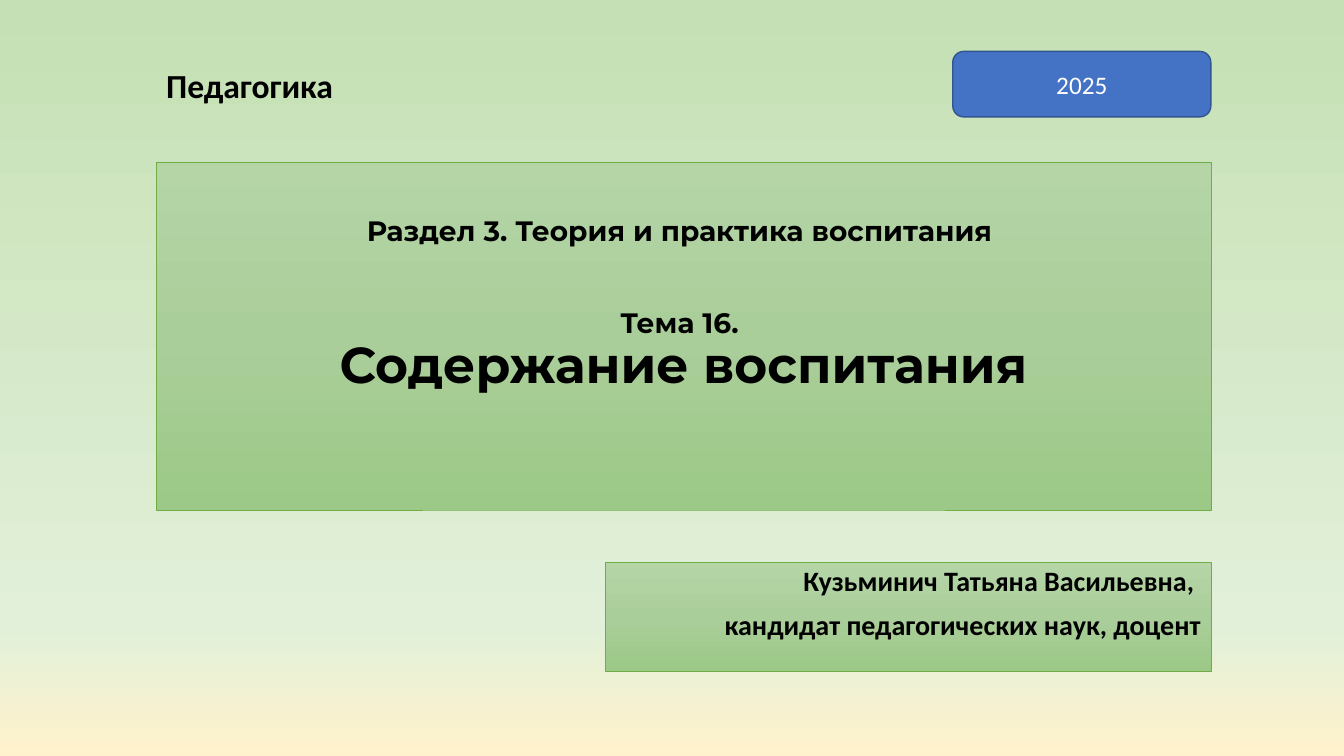
import dataclasses

import lxml.etree
import pptx
import pptx.dml.color
import pptx.enum.shapes
import pptx.enum.text
import pptx.oxml.ns
import pptx.util

Inches = pptx.util.Inches
Align = pptx.enum.text.PP_ALIGN
Anchor = pptx.enum.text.MSO_ANCHOR


@dataclasses.dataclass(frozen=True)
class Theme:
    heading_font: str = "Montserrat"
    body_font: str = "Calibri"
    text: str = "000000"
    badge_text: str = "FFFFFF"
    badge_fill: str = "4472C4"
    badge_line: str = "325491"
    panel_line: str = "70AD47"
    panel_stops: tuple = ((0, "B5D5A7"), (50, "AACE9A"), (100, "9CC987"))
    background_stops: tuple = ((0, "C5E0B4"), (83, "E2F0D9"), (100, "FFF2CC"))
    topic_size: int = 36
    course_size: int = 24
    body_size: int = 20
    badge_size: int = 18


class CoverSlide:
    def __init__(self, presentation, theme):
        self.theme = theme
        self.slide = presentation.slides.add_slide(presentation.slide_layouts[0])

    def color(self, value):
        return pptx.dml.color.RGBColor.from_string(value)

    def gradient(self, fill, element, stops):
        fill.gradient()
        fill.gradient_angle = 270
        stop_list = element.xpath(".//a:gsLst")[0]
        for stop in list(stop_list):
            stop_list.remove(stop)
        qn = pptx.oxml.ns.qn
        for position, value in stops:
            stop = lxml.etree.SubElement(stop_list, qn("a:gs"), pos=str(position * 1000))
            lxml.etree.SubElement(stop, qn("a:srgbClr"), val=value)

    def background(self):
        self.gradient(self.slide.background.fill, self.slide.element, self.theme.background_stops)

    def outline(self, shape, value, width):
        shape.line.color.rgb = self.color(value)
        shape.line.width = pptx.util.Pt(width)

    def fill_text(self, frame, lines, alignment, font_name, color, bold=True, line_spacing=1.0):
        for index, (text, size, space_before) in enumerate(lines):
            paragraph = frame.paragraphs[0] if index == 0 else frame.add_paragraph()
            paragraph.text = text
            paragraph.alignment = alignment
            paragraph.line_spacing = line_spacing
            paragraph.space_before = pptx.util.Pt(space_before)
            paragraph.font.name = font_name
            paragraph.font.size = pptx.util.Pt(size)
            paragraph.font.bold = bold
            paragraph.font.color.rgb = self.color(color)

    def panel(self, shape, box, lines, alignment, anchor, font_name, bottom_margin=0.05):
        shape.left, shape.top, shape.width, shape.height = map(Inches, box)
        self.gradient(shape.fill, shape.element, self.theme.panel_stops)
        self.outline(shape, self.theme.panel_line, 0.5)
        frame = shape.text_frame
        frame.auto_size = pptx.enum.text.MSO_AUTO_SIZE.NONE
        frame.vertical_anchor = anchor
        frame.margin_bottom = Inches(bottom_margin)
        self.fill_text(frame, lines, alignment, font_name, self.theme.text, line_spacing=0.9)

    def label(self, box, text):
        frame = self.slide.shapes.add_textbox(*map(Inches, box)).text_frame
        frame.word_wrap = False
        frame.auto_size = pptx.enum.text.MSO_AUTO_SIZE.SHAPE_TO_FIT_TEXT
        self.fill_text(frame, [(text, self.theme.course_size, 0)], Align.LEFT,
                       self.theme.body_font, self.theme.text)

    def badge(self, box, text):
        shape = self.slide.shapes.add_shape(
            pptx.enum.shapes.MSO_SHAPE.ROUNDED_RECTANGLE, *map(Inches, box))
        shape.shadow.inherit = False
        shape.fill.solid()
        shape.fill.fore_color.rgb = self.color(self.theme.badge_fill)
        self.outline(shape, self.theme.badge_line, 1)
        shape.text_frame.vertical_anchor = Anchor.MIDDLE
        self.fill_text(shape.text_frame, [(text, self.theme.badge_size, 0)], Align.CENTER,
                       self.theme.body_font, self.theme.badge_text, bold=False)


def main():
    presentation = pptx.Presentation()
    presentation.slide_width = Inches(13.33)
    presentation.slide_height = Inches(7.5)
    theme = Theme()
    cover = CoverSlide(presentation, theme)
    cover.background()
    title, subtitle = cover.slide.placeholders
    cover.panel(
        title, (1.55, 1.61, 10.46, 3.45),
        [("Раздел 3. Теория и практика воспитания ", theme.body_size, 0),
         ("Тема 16. ", theme.body_size, 44),
         ("Содержание воспитания", theme.topic_size, 0)],
        Align.CENTER, Anchor.BOTTOM, theme.heading_font, bottom_margin=1.15)
    cover.panel(
        subtitle, (6, 5.58, 6.01, 1.08),
        [("Кузьминич Татьяна Васильевна, ", theme.body_size, 10),
         ("кандидат педагогических наук, доцент", theme.body_size, 10)],
        Align.RIGHT, Anchor.TOP, theme.body_font)
    cover.label((1.55, 0.59, 1.95, 0.5), "Педагогика")
    cover.badge((9.45, 0.51, 2.56, 0.65), "2025")
    presentation.save("out.pptx")


if __name__ == "__main__":
    main()
